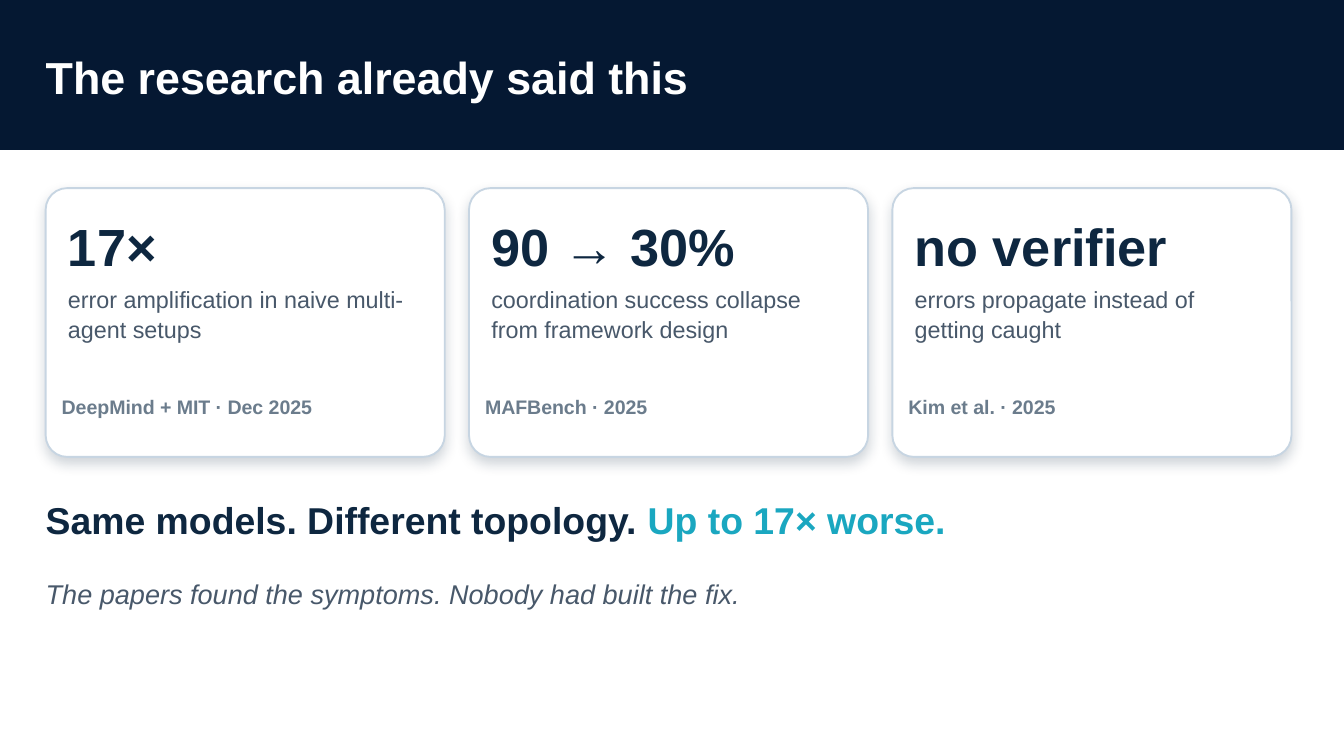
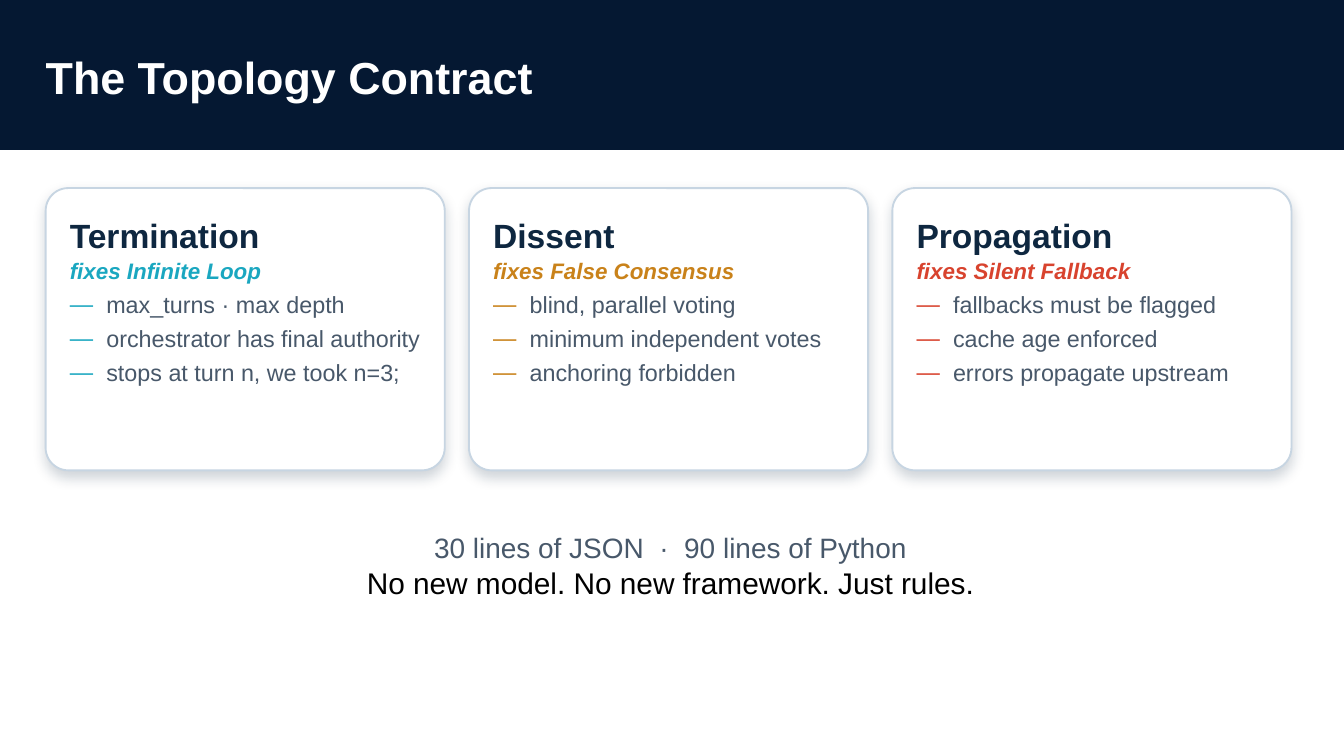
from lxml import etree
from pptx import Presentation
from pptx import util as u
from pptx.dml.color import RGBColor
from pptx.enum import shapes, text
from pptx.oxml.ns import qn

Pt = u.Pt
FONT = "Arial"
COLORS = {
    "band": "051832", "white": "FFFFFF", "black": "000000",
    "navy": "0E2740", "slate": "48586A", "muted": "6B7C8C",
    "border": "C7D5E2", "teal": "1AA7C0", "amber": "C9821A", "red": "D8432E",
}

# Shared grid, in points
WIDTH, HEIGHT = 720, 405
LEFT, CARD_TOP = 24.5, 100.8
CARD_W, CARD_GAP = 213.8, 13
TEXT_W = 669.6
BAND_H = 80.4


def rgb(name):
    return RGBColor.from_string(COLORS[name])


def card_left(i):
    return LEFT + i * (CARD_W + CARD_GAP)


def add_xml(parent, tag, **attrs):
    return etree.SubElement(parent, qn(tag), attrs)


class Deck:
    def __init__(self):
        self.prs = Presentation()
        self.prs.slide_width, self.prs.slide_height = Pt(WIDTH), Pt(HEIGHT)
        self.layout = self.prs.slide_layouts[5]
        self.s = None

    def slide(self, title):
        first = self.s is None
        self.s = self.prs.slides.add_slide(self.layout)
        if first:
            self.band()
        sp = self.s.shapes.title
        sp.left, sp.top, sp.width, sp.height = Pt(LEFT), Pt(8.6), Pt(648), Pt(64.8)
        tf = self.frame(sp, anchor=text.MSO_ANCHOR.MIDDLE)
        self.para(tf, title, 24, "white", bold=True)

    def band(self):
        """Place the title band on the layout, behind its placeholders."""
        sp = self.shape(shapes.MSO_SHAPE.RECTANGLE, 0, 0, WIDTH, BAND_H, "band")
        self.layout.shapes._spTree.insert(2, sp._element)

    def shape(self, kind, x, y, w, h, fill, line=None):
        sp = self.s.shapes.add_shape(kind, Pt(x), Pt(y), Pt(w), Pt(h))
        sp.fill.solid()
        sp.fill.fore_color.rgb = rgb(fill)
        if line:
            sp.line.color.rgb = rgb(line)
            sp.line.width = Pt(1)
        else:
            sp.line.fill.background()
        sp.shadow.inherit = False
        return sp

    def card(self, i, h, inset):
        """Add the i-th rounded card and return its text frame."""
        sp = self.shape(shapes.MSO_SHAPE.ROUNDED_RECTANGLE, card_left(i), CARD_TOP,
                        CARD_W, h, "white", "border")
        sp.adjustments[0] = 0.08
        effects = sp._element.spPr.find(qn("a:effectLst"))
        shadow = add_xml(effects, "a:outerShdw", blurRad=str(Pt(7.1)), dist=str(Pt(3)),
                         dir="5400000", algn="ctr", rotWithShape="0")
        color = add_xml(shadow, "a:srgbClr", val=COLORS["navy"])
        add_xml(color, "a:alpha", val="20000")
        return self.frame(sp, (inset, 10.8, 8.6, 3.6))

    def box(self, x, y, w, h):
        return self.frame(self.s.shapes.add_textbox(Pt(x), Pt(y), Pt(w), Pt(h)))

    def frame(self, sp, insets=(0, 0, 0, 0), anchor=text.MSO_ANCHOR.TOP):
        tf = sp.text_frame
        tf.word_wrap = True
        tf.auto_size = text.MSO_AUTO_SIZE.NONE
        tf.vertical_anchor = anchor
        tf.margin_left, tf.margin_top, tf.margin_right, tf.margin_bottom = map(Pt, insets)
        return tf

    def para(self, tf, words, size, color, bold=False, italic=False, before=None,
             spacing=None, align=text.PP_ALIGN.LEFT, dash=None):
        """Fill the empty first paragraph, or add one; dash is a bullet colour."""
        p = tf.paragraphs[0]
        if p.runs:
            p = tf.add_paragraph()
        if dash:
            self.dash(p, dash)
        p.alignment = align
        if before:
            p.space_before = Pt(before)
        if spacing:
            p.line_spacing = spacing
        p.add_run().text = words
        f = p.font
        f.name, f.size, f.bold, f.italic = FONT, Pt(size), bold, italic
        f.color.rgb = rgb(color)
        return p

    def dash(self, p, color):
        pPr = p._p.get_or_add_pPr()
        pPr.set("marL", str(Pt(19.6)))
        pPr.set("indent", str(-Pt(19.6)))
        add_xml(add_xml(pPr, "a:buClr"), "a:srgbClr", val=COLORS[color])
        add_xml(pPr, "a:buFont", typeface=FONT)
        add_xml(pPr, "a:buChar", char="—")


def research_slide(deck):
    deck.slide("The research already said this")

    # Finding cards with their sources
    findings = [
        ("17×", "error amplification in naive multi-agent setups",
         "DeepMind + MIT · Dec 2025"),
        ("90 → 30%", "coordination success collapse from framework design",
         "MAFBench · 2025"),
        ("no verifier", "errors propagate instead of getting caught",
         "Kim et al. · 2025"),
    ]
    for i, (figure, meaning, source) in enumerate(findings):
        tf = deck.card(i, 144, 8.6)
        deck.para(tf, figure, 28, "navy", bold=True)
        deck.para(tf, meaning, 12.5, "slate", before=3, spacing=1.08)
        tf = deck.box(card_left(i) + 8.6, 211.7, 196.6, 25.2)
        deck.para(tf, source, 10.5, "muted", bold=True)

    # Conclusion
    tf = deck.box(LEFT, 266.4, TEXT_W, 39.6)
    p = deck.para(tf, "Same models. Different topology. ", 20, "navy", bold=True)
    r = p.add_run()
    r.text = "Up to 17× worse."
    r.font.color.rgb = rgb("teal")
    tf = deck.box(LEFT, 309.6, TEXT_W, 32.4)
    deck.para(tf, "The papers found the symptoms. Nobody had built the fix.",
              14.5, "slate", italic=True)


def contract_slide(deck):
    deck.slide("The Topology Contract")

    # Rule cards
    rules = [
        ("Termination", "fixes Infinite Loop", "teal",
         ["max_turns · max depth", "orchestrator has final authority",
          "stops at turn n, we took n=3;"]),
        ("Dissent", "fixes False Consensus", "amber",
         ["blind, parallel voting", "minimum independent votes",
          "anchoring forbidden"]),
        ("Propagation", "fixes Silent Fallback", "red",
         ["fallbacks must be flagged", "cache age enforced",
          "errors propagate upstream"]),
    ]
    for i, (name, fix, accent, points) in enumerate(rules):
        tf = deck.card(i, 151.2, 9.4)
        deck.para(tf, name, 18, "navy", bold=True)
        deck.para(tf, fix, 12, accent, bold=True, italic=True, before=1.2)
        for point in points:
            deck.para(tf, point, 12.5, "slate", before=2, spacing=1.08, dash=accent)

    # Closing lines
    tf = deck.box(LEFT, 284.4, TEXT_W, 36)
    center = text.PP_ALIGN.CENTER
    deck.para(tf, "30 lines of JSON  ·  90 lines of Python", 15, "slate", align=center)
    deck.para(tf, "No new model. No new framework. Just rules.", 16, "black", align=center)


def main():
    deck = Deck()
    research_slide(deck)
    contract_slide(deck)
    deck.prs.save("out.pptx")


if __name__ == "__main__":
    main()
